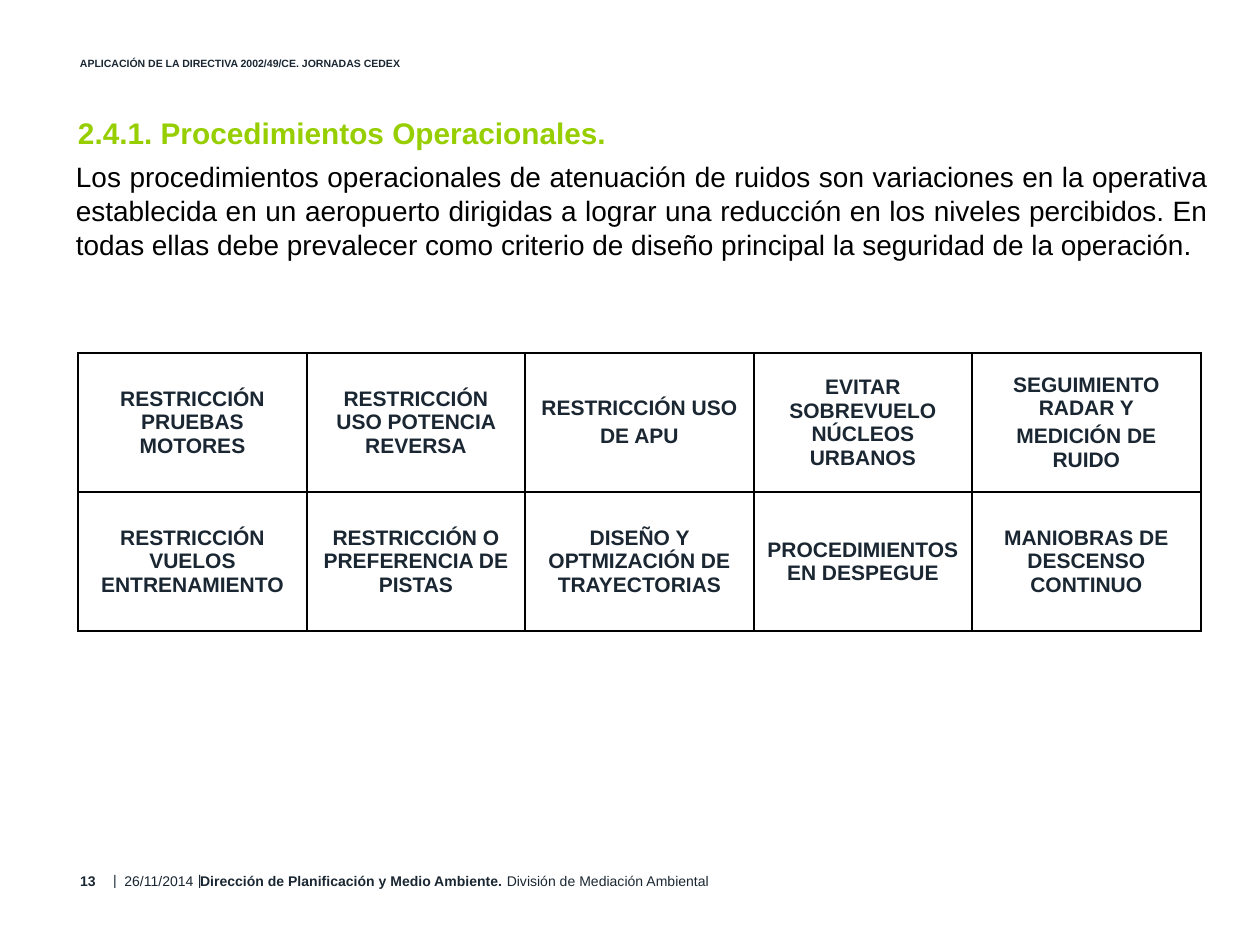
"""Build the slide on operational noise abatement procedures."""
from dataclasses import dataclass

import lxml.etree
import pptx
import pptx.dml.color
import pptx.enum.text
import pptx.oxml.ns
import pptx.util

ALIGN = pptx.enum.text.PP_ALIGN
ANCHOR = pptx.enum.text.MSO_ANCHOR
SCALE = 914400 / 126


@dataclass(frozen=True)
class Theme:
    font: str = "Arial"
    ink: str = "1A2732"
    accent: str = "96CE00"
    black: str = "000000"
    white: str = "FFFFFF"
    header_size: int = 6
    footer_size: int = 8
    cell_size: int = 12
    body_size: int = 16
    heading_size: int = 17
    border_width: int = 1


THEME = Theme()


@dataclass(frozen=True)
class Label:
    runs: tuple[str, ...]
    left: int
    top: int
    width: int
    height: int
    size: int
    color: str = THEME.ink
    bold_runs: int = 0
    align: ALIGN = ALIGN.LEFT
    anchor: ANCHOR = ANCHOR.TOP
    margin_x: int = 0
    margin_y: int = 0
    wrap: bool = True


FOOTER_TOP = 874
LABELS = (
    *(Label(("|",), left, 872, 4, 16, THEME.footer_size, wrap=False) for left in (113, 198)),
    Label(("26/11/2014",), 117, FOOTER_TOP, 84, 14, THEME.footer_size,
          align=ALIGN.CENTER, anchor=ANCHOR.MIDDLE),
    Label(("13",), 80, FOOTER_TOP, 32, 14, THEME.footer_size,
          bold_runs=1, anchor=ANCHOR.MIDDLE),
    Label(("Dirección de Planificación y Medio Ambiente. ", "División de Mediación Ambiental"),
          200, 871, 597, 20, THEME.footer_size, bold_runs=1, anchor=ANCHOR.MIDDLE),
    Label(("APLICACIÓN DE LA DIRECTIVA 2002/49/CE. JORNADAS CEDEX",),
          80, 57, 364, 13, THEME.header_size, bold_runs=1),
    Label(("2.4.1. Procedimientos Operacionales.",),
          78, 115, 1154, 47, THEME.heading_size, THEME.accent, bold_runs=1),
    Label(("Los procedimientos operacionales de atenuación de ruidos son variaciones en la "
           "operativa establecida en un aeropuerto dirigidas a lograr una reducción en los "
           "niveles percibidos. En todas ellas debe prevalecer como criterio de diseño "
           "principal la seguridad de la operación.",),
          63, 154, 1158, 115, THEME.body_size, THEME.black,
          align=ALIGN.JUSTIFY, margin_x=13, margin_y=6),
)

TABLE_LEFT, TABLE_TOP, ROW_HEIGHT = 78, 353, 139
COLUMN_WIDTHS = (229, 218, 229, 218, 229)
PROCEDURES = (
    ("RESTRICCIÓN PRUEBAS MOTORES",
     "RESTRICCIÓN USO POTENCIA REVERSA",
     "RESTRICCIÓN USO\nDE APU",
     "EVITAR SOBREVUELO NÚCLEOS URBANOS",
     "SEGUIMIENTO RADAR Y\nMEDICIÓN DE RUIDO"),
    ("RESTRICCIÓN VUELOS ENTRENAMIENTO",
     "RESTRICCIÓN O PREFERENCIA DE PISTAS",
     "DISEÑO Y OPTMIZACIÓN DE TRAYECTORIAS",
     "PROCEDIMIENTOS EN DESPEGUE",
     "MANIOBRAS DE DESCENSO CONTINUO"),
)


def px(length: int) -> pptx.util.Emu:
    """Turn pixels into EMU."""
    return pptx.util.Emu(round(length * SCALE))


def set_font(font: pptx.text.text.Font, size: int, color: str) -> None:
    """Set the typeface, size and colour."""
    font.name = THEME.font
    font.size = pptx.util.Pt(size)
    font.color.rgb = pptx.dml.color.RGBColor.from_string(color)


def add_label(slide: pptx.slide.Slide, label: Label) -> None:
    """Draw one text box."""
    shape = slide.shapes.add_textbox(
        px(label.left), px(label.top), px(label.width), px(label.height))
    frame = shape.text_frame
    frame.word_wrap = label.wrap
    frame.vertical_anchor = label.anchor
    frame.margin_left = frame.margin_right = px(label.margin_x)
    frame.margin_top = frame.margin_bottom = px(label.margin_y)
    paragraph = frame.paragraphs[0]
    paragraph.alignment = label.align
    set_font(paragraph.font, label.size, label.color)
    for index, text in enumerate(label.runs):
        run = paragraph.add_run()
        run.text = text
        run.font.bold = index < label.bold_runs


def add_borders(cell: pptx.table._Cell) -> None:
    """Outline the four sides of a cell."""
    properties = cell._tc.get_or_add_tcPr()
    qualified = pptx.oxml.ns.qn
    for index, side in enumerate(("a:lnL", "a:lnR", "a:lnT", "a:lnB")):
        line = lxml.etree.Element(
            qualified(side), w=str(pptx.util.Pt(THEME.border_width)))
        fill = lxml.etree.SubElement(line, qualified("a:solidFill"))
        lxml.etree.SubElement(fill, qualified("a:srgbClr"), val=THEME.black)
        properties.insert(index, line)


def fill_cell(cell: pptx.table._Cell, text: str) -> None:
    """Write and style one table cell."""
    cell.text = text
    cell.vertical_anchor = ANCHOR.MIDDLE
    cell.fill.solid()
    cell.fill.fore_color.rgb = pptx.dml.color.RGBColor.from_string(THEME.white)
    add_borders(cell)
    for index, paragraph in enumerate(cell.text_frame.paragraphs):
        paragraph.alignment = ALIGN.CENTER
        if index:
            paragraph.space_before = pptx.util.Pt(THEME.cell_size * 0.2)
        set_font(paragraph.font, THEME.cell_size, THEME.ink)
        paragraph.font.bold = True


def add_procedures(slide: pptx.slide.Slide) -> None:
    """Draw the table of procedures."""
    table = slide.shapes.add_table(
        len(PROCEDURES), len(COLUMN_WIDTHS), px(TABLE_LEFT), px(TABLE_TOP),
        px(sum(COLUMN_WIDTHS)), px(ROW_HEIGHT * len(PROCEDURES))).table
    table.first_row = table.horz_banding = False
    for column, width in zip(table.columns, COLUMN_WIDTHS):
        column.width = px(width)
    for row, texts in zip(table.rows, PROCEDURES):
        row.height = px(ROW_HEIGHT)
        for cell, text in zip(row.cells, texts):
            fill_cell(cell, text)


def main() -> None:
    """Build and save the presentation."""
    presentation = pptx.Presentation()
    presentation.slide_width, presentation.slide_height = px(1260), px(945)
    slide = presentation.slides.add_slide(presentation.slide_layouts[6])
    for label in LABELS:
        add_label(slide, label)
    add_procedures(slide)
    presentation.save("out.pptx")


if __name__ == "__main__":
    main()
